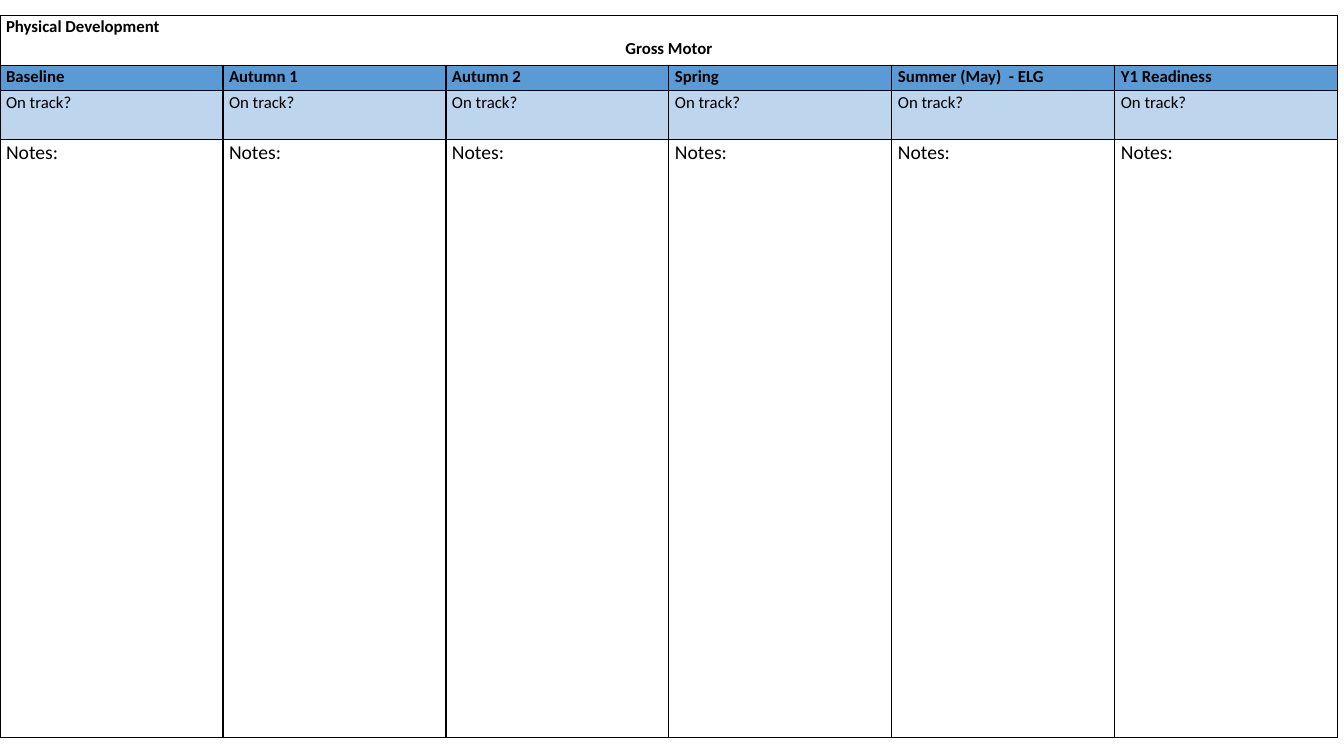
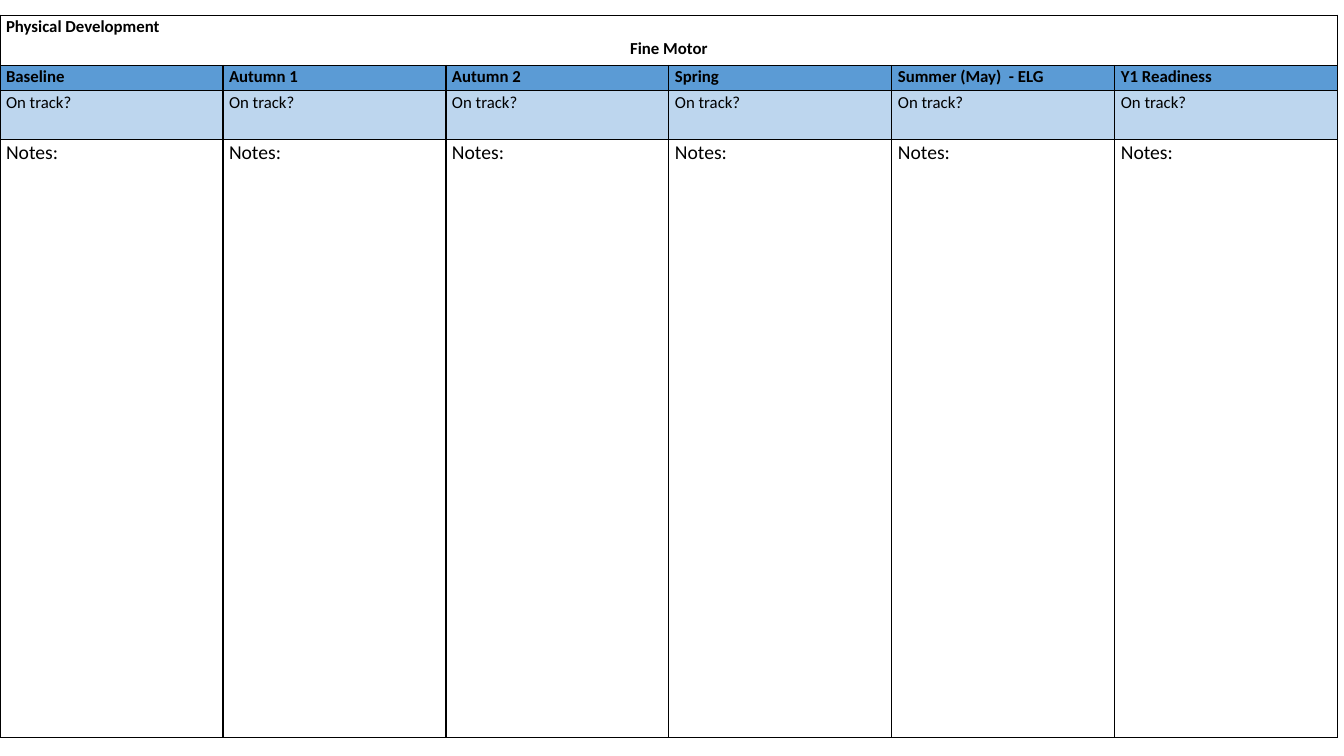
from lxml.etree import SubElement
from pptx import Presentation
from pptx.dml.color import RGBColor
from pptx.enum.text import PP_ALIGN as Align
from pptx.oxml.ns import qn
from pptx.util import Inches, Pt

COLORS = {"ink": "000000", "header": "5B9BD5", "track": "BDD6EE"}
FONT = "Calibri"
AREA = "Physical Development"
ASPECTS = ["Gross Motor", "Fine Motor"]
PERIODS = ["Baseline", "Autumn 1", "Autumn 2", "Spring", "Summer (May)  - ELG", "Y1 Readiness"]
ROW_HEIGHTS = [0.5, 0.25, 0.48, 5.94]
TABLE_BOX = (0, 0.15, 13.27, sum(ROW_HEIGHTS))


def add_borders(cell):
    """Draw a thin solid line on all four sides of a cell."""
    properties = cell._tc.get_or_add_tcPr()
    for side in ("a:lnL", "a:lnR", "a:lnT", "a:lnB"):
        line = SubElement(properties, qn(side), w=str(Pt(1)))
        fill = SubElement(line, qn("a:solidFill"))
        SubElement(fill, qn("a:srgbClr"), val=COLORS["ink"])


def style_cell(cell, fill=None):
    """Set the margins, borders and fill of a cell."""
    cell.margin_left = cell.margin_right = Inches(0.06)
    cell.margin_top = cell.margin_bottom = 0
    add_borders(cell)
    if fill:
        cell.fill.solid()
        cell.fill.fore_color.rgb = RGBColor.from_string(COLORS[fill])
    else:
        cell.fill.background()


def write_cell(cell, text, size=12, bold=False):
    """Write the lines of a cell in the shared text style."""
    cell.text = text
    for paragraph in cell.text_frame.paragraphs:
        paragraph.line_spacing = 1.07
        font = paragraph.font
        font.name, font.size, font.bold = FONT, Pt(size), bold
        font.color.rgb = RGBColor.from_string(COLORS["ink"])


def add_tracking_table(slide, box, aspect):
    """Fill a box with the progress table of one aspect."""
    left, top, width, height = (Inches(length) for length in box)
    shape = slide.shapes.add_table(len(ROW_HEIGHTS), len(PERIODS), left, top, width, height)
    table = shape.table
    table.first_row = table.horz_banding = False
    for row, row_height in zip(table.rows, ROW_HEIGHTS):
        row.height = Inches(row_height)
    for row, fill in zip(table.rows, (None, "header", "track", None)):
        for cell in row.cells:
            style_cell(cell, fill)

    title = table.cell(0, 0)
    title.merge(table.cell(0, len(PERIODS) - 1))
    write_cell(title, f"{AREA}\n{aspect}", bold=True)
    title.text_frame.paragraphs[1].alignment = Align.CENTER

    for column, period in enumerate(PERIODS):
        write_cell(table.cell(1, column), period, bold=True)
        write_cell(table.cell(2, column), "On track?")
        write_cell(table.cell(3, column), "Notes:", size=14)


def main():
    """Build one tracking slide for each aspect."""
    presentation = Presentation()
    presentation.slide_width, presentation.slide_height = Inches(13.33), Inches(7.5)
    for aspect in ASPECTS:
        slide = presentation.slides.add_slide(presentation.slide_layouts[6])
        add_tracking_table(slide, TABLE_BOX, aspect)
    presentation.save("out.pptx")


if __name__ == "__main__":
    main()
